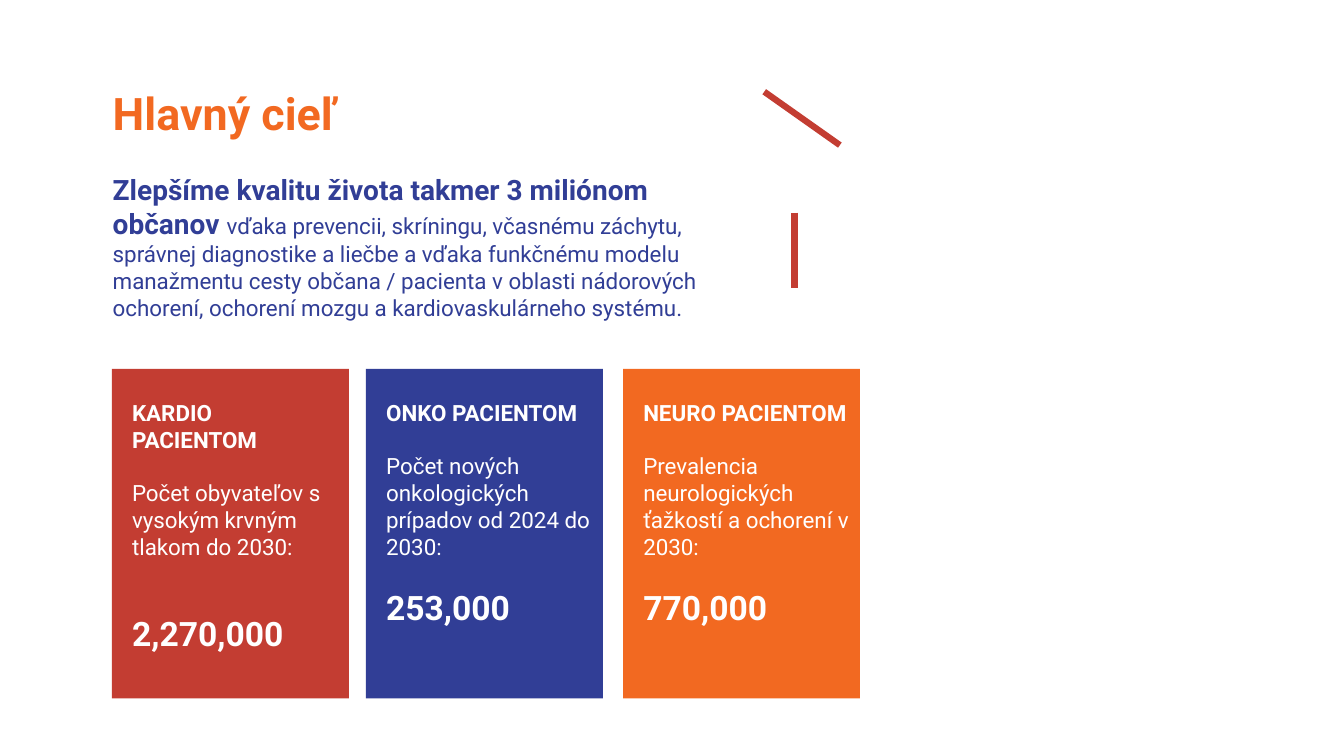
"""Build the slide on the main goal with three patient group cards."""
from dataclasses import dataclass

from pptx import Presentation
from pptx import util as u
from pptx.dml.color import RGBColor
from pptx.enum import shapes, text
from pptx.oxml.ns import qn
from lxml import etree


@dataclass(frozen=True)
class Theme:
    font: str = "Roboto"
    red: RGBColor = RGBColor(0xC3, 0x3D, 0x32)
    blue: RGBColor = RGBColor(0x31, 0x3E, 0x96)
    orange: RGBColor = RGBColor(0xF2, 0x69, 0x21)
    white: RGBColor = RGBColor(0xFF, 0xFF, 0xFF)
    title: int = 32
    lead: int = 20
    body: int = 16
    figure: int = 24


theme = Theme()


def style(font, size, color, bold):
    font.name, font.size, font.bold = theme.font, u.Pt(size), bold
    font.color.rgb = color


deck = Presentation()
deck.slide_width, deck.slide_height = u.Inches(13.33), u.Inches(7.5)
page = deck.slides.add_slide(deck.slide_layouts[6])

goal = page.shapes.add_textbox(u.Inches(1.02), u.Inches(0.8), u.Inches(6.56), u.Inches(2.46))
goal.text_frame.word_wrap = True
title = goal.text_frame.paragraphs[0]
title.text = "Hlavný cieľ"
title.space_after = u.Pt(24)
style(title.font, theme.title, theme.orange, True)

statement = goal.text_frame.add_paragraph()
for words, size, bold in (
    ("Zlepšíme kvalitu života takmer 3 miliónom občanov ", theme.lead, True),
    ("vďaka prevencii, skríningu, včasnému záchytu, správnej diagnostike a liečbe "
     "a vďaka funkčnému modelu manažmentu cesty občana / pacienta v oblasti nádorových "
     "ochorení, ochorení mozgu a kardiovaskulárneho systému.", theme.body, False),
):
    span = statement.add_run()
    span.text = words
    style(span.font, size, theme.blue, bold)

blank_line = 19
cards = (
    (1.11, theme.red, "KARDIO PACIENTOM",
     "Počet obyvateľov s vysokým krvným tlakom do 2030:", "2,270,000", 2 * blank_line),
    (3.63, theme.blue, "ONKO PACIENTOM",
     "Počet nových onkologických prípadov od 2024 do 2030:", "253,000", blank_line),
    (6.18, theme.orange, "NEURO PACIENTOM",
     "Prevalencia neurologických ťažkostí a ochorení v 2030:", "770,000", blank_line),
)
for left, color, group, measure, figure, figure_gap in cards:
    card = page.shapes.add_shape(
        shapes.MSO_SHAPE.RECTANGLE, u.Inches(left), u.Inches(3.66), u.Inches(2.35), u.Inches(3.27))
    card.shadow.inherit = False
    card.fill.solid()
    card.fill.fore_color.rgb = color
    card.line.fill.background()
    frame = card.text_frame
    frame.word_wrap = True
    frame.vertical_anchor = text.MSO_ANCHOR.TOP
    frame.margin_left, frame.margin_top = u.Inches(0.2), u.Inches(0.3)
    frame.margin_right, frame.margin_bottom = u.Inches(0.1), u.Inches(0.05)
    rows = (
        (group, theme.body, True, blank_line),
        (measure, theme.body, False, figure_gap),
        (figure, theme.figure, True, 0),
    )
    for index, (words, size, bold, gap) in enumerate(rows):
        para = frame.add_paragraph() if index else frame.paragraphs[0]
        para.text = words
        para.alignment = text.PP_ALIGN.LEFT
        para.space_after = u.Pt(gap)
        style(para.font, size, theme.white, bold)

for ends in ((7.58, 0.91, 8.33, 1.44), (7.88, 2.11, 7.88, 2.86)):
    stroke = page.shapes.add_connector(
        shapes.MSO_CONNECTOR.STRAIGHT, *(u.Inches(end) for end in ends))
    stroke.line.color.rgb = theme.red
    stroke.line.width = u.Pt(4.5)
    etree.SubElement(stroke._element.spPr, qn("a:effectLst"))

deck.save("out.pptx")
